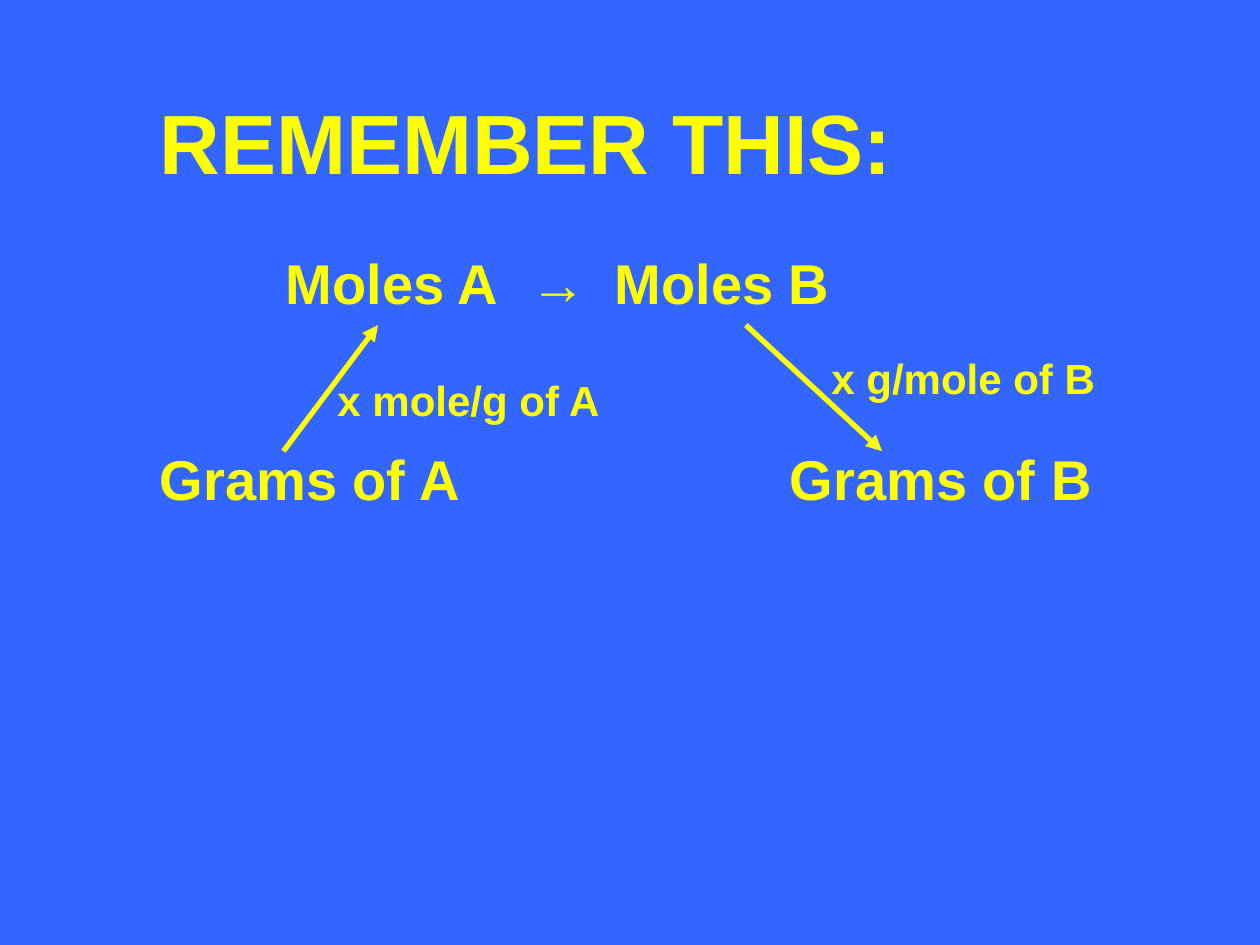
from lxml.etree import SubElement
from pptx import Presentation
from pptx.dml.color import RGBColor
from pptx.enum.shapes import MSO_CONNECTOR as Connector
from pptx.oxml.ns import qn
from pptx.util import Inches, Pt

BLUE, YELLOW = "3366FF", "FFFF00"
FONT = "Arial"


def color(hex_value):
    return RGBColor.from_string(hex_value)


def set_tabs(paragraph, stops):
    tab_list = SubElement(paragraph._p.get_or_add_pPr(), qn("a:tabLst"))
    for stop in stops:
        SubElement(tab_list, qn("a:tab"), pos=str(Inches(stop)), algn="l")


def add_text(slide, box, lines, size, gap=0):
    """Place (text, tab stops) lines in a box, with a gap between them."""
    shape = slide.shapes.add_textbox(*map(Inches, box))
    frame = shape.text_frame
    frame.word_wrap = True
    for index, (text, stops) in enumerate(lines):
        paragraph = frame.add_paragraph() if index else frame.paragraphs[0]
        paragraph.text = text
        if stops:
            set_tabs(paragraph, stops)
        if index:
            paragraph.space_before = Pt(gap)
        font = paragraph.font
        font.name, font.size, font.bold = FONT, Pt(size), True
        font.color.rgb = color(YELLOW)


def add_arrow(slide, start, end):
    arrow = slide.shapes.add_connector(
        Connector.STRAIGHT, *map(Inches, start + end))
    arrow.line.color.rgb = color(YELLOW)
    arrow.line.width = Pt(3)
    SubElement(arrow.line._get_or_add_ln(), qn("a:tailEnd"), type="triangle")
    SubElement(arrow._element.spPr, qn("a:effectLst"))


def add_conversion_map(slide, left, top, width, height):
    # Moles above, grams below
    lines = [("\tMoles A\t→\tMoles B", (1, 2.94, 3.61)),
             ("Grams of A\tGrams of B", (5,))]
    add_text(slide, (left, top, width, height), lines, 32, gap=74)

    # Arrows between the two rows
    upper, lower = top + 0.66, top + 1.66
    add_arrow(slide, (left + 1.08, lower), (left + 1.83, upper))
    add_arrow(slide, (left + 4.75, upper), (left + 5.83, lower))

    # Conversion factors
    for text, x, y in (("x mole/g of A", 1.41, 1), ("x g/mole of B", 5.33, 0.83)):
        add_text(slide, (left + x, top + y, 2.29, 0.5), [(text, ())], 24)


def main():
    presentation = Presentation()
    presentation.slide_width = Inches(10)
    presentation.slide_height = Inches(7.5)
    slide = presentation.slides.add_slide(presentation.slide_layouts[6])
    fill = slide.background.fill
    fill.solid()
    fill.fore_color.rgb = color(BLUE)

    add_conversion_map(slide, 1.17, 1.92, 7.6, 2.23)
    # Title
    add_text(slide, (1.17, 0.67, 6.02, 0.9), [("REMEMBER THIS:", ())], 48)
    presentation.save("out.pptx")


if __name__ == "__main__":
    main()
